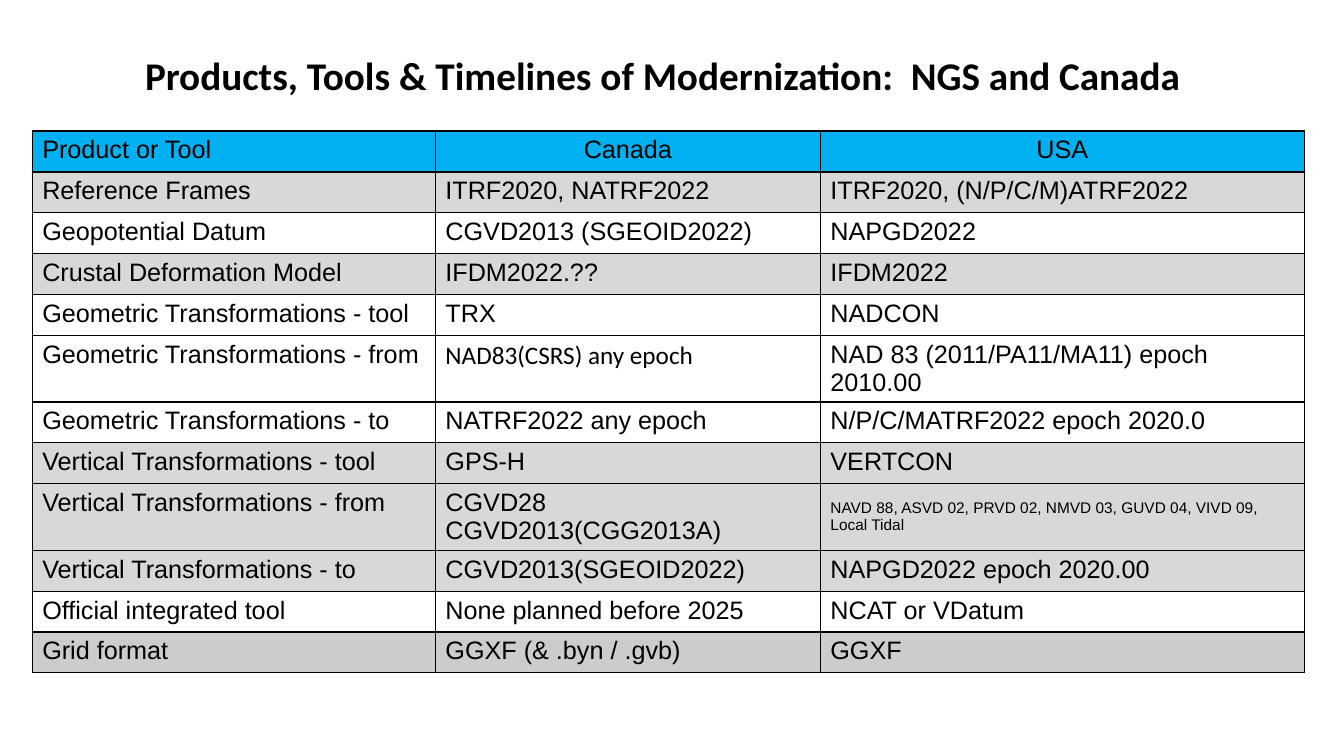
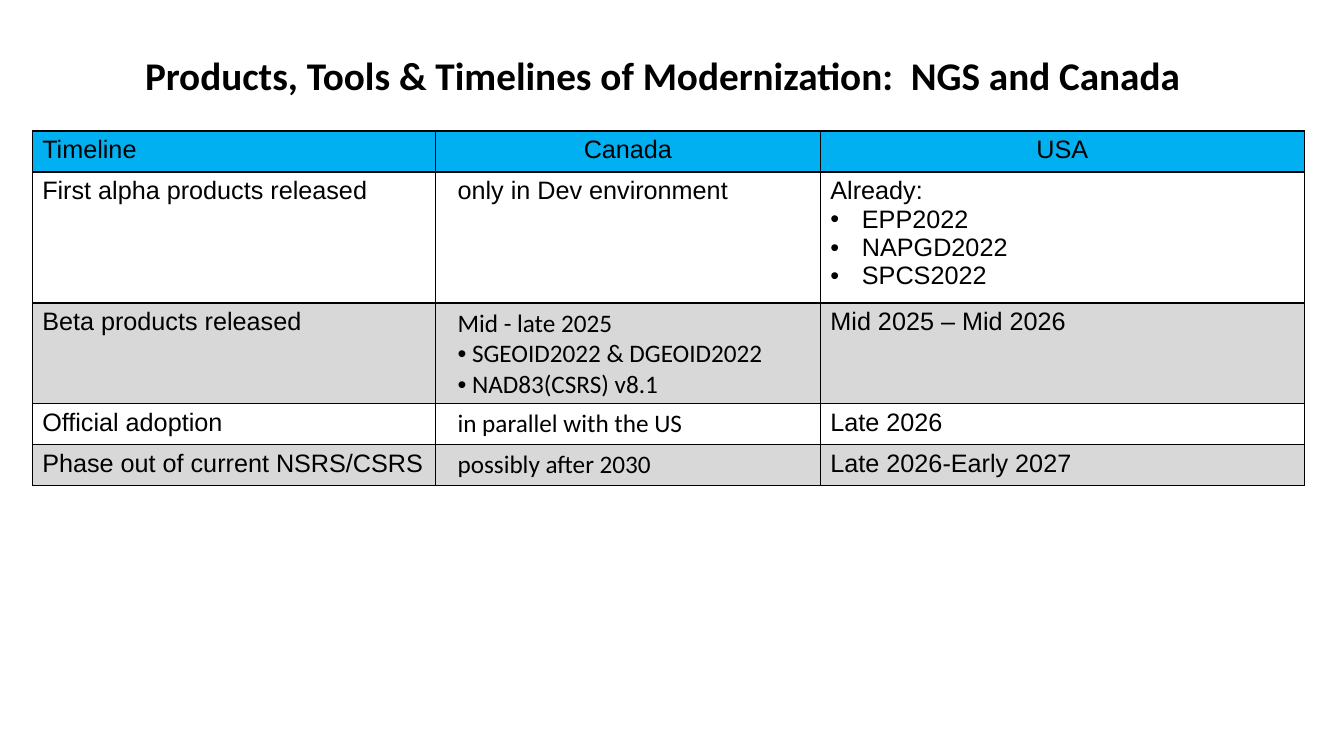
from dataclasses import dataclass, field
from typing import Any

from lxml.etree import SubElement
from pptx import Presentation
from pptx.dml.color import RGBColor
from pptx.enum.text import MSO_ANCHOR, MSO_AUTO_SIZE, PP_ALIGN
from pptx.oxml.ns import qn
from pptx.util import Pt


@dataclass(frozen=True)
class Theme:
    """Colours, fonts and type sizes shared by the slides."""
    ink: str = "000000"
    header: str = "00B0F0"
    white: str = "FFFFFF"
    grey: str = "D8D8D8"
    dark_grey: str = "CCCCCC"
    body_font: str = "Arial"
    alt_font: str = "Calibri"
    title_size: int = 28
    body_size: int = 18
    small_size: int = 11
    border: float = 1


THEME = Theme()
TITLE = "Products, Tools & Timelines of Modernization:  NGS and Canada"
COLUMN_WIDTHS = (288, 275, 345.6)
ROW_HEIGHT = 29.2


@dataclass(frozen=True)
class Line:
    """One paragraph of a cell with its format."""
    text: str
    style: dict[str, Any] = field(default_factory=dict)


@dataclass(frozen=True)
class Row:
    """One table row with its fill and cells."""
    fill: str
    cells: tuple


CENTERED = {"align": PP_ALIGN.CENTER}
ALTERNATE = {"font": THEME.alt_font}
SMALL = {"size": THEME.small_size}
INDENTED = {"left": 8.64}
INDENTED_ALTERNATE = ALTERNATE | INDENTED
BULLETED = {"left": 22.5, "hanging": 22.5, "bullet": "•"}
TIGHT_BULLETED = ALTERNATE | {"left": 19, "hanging": 10.36, "bullet": "•"}


def header_row(subject):
    """Return the header row for a comparison of the two countries."""
    return Row(THEME.header, (subject, Line("Canada", CENTERED), Line("USA", CENTERED)))


PRODUCT_ROWS = (
    header_row("Product or Tool"),
    Row(THEME.grey, ("Reference Frames", "ITRF2020, NATRF2022", "ITRF2020, (N/P/C/M)ATRF2022")),
    Row(THEME.white, ("Geopotential Datum", "CGVD2013 (SGEOID2022)", "NAPGD2022")),
    Row(THEME.grey, ("Crustal Deformation Model", "IFDM2022.??", "IFDM2022")),
    Row(THEME.white, ("Geometric Transformations - tool", "TRX", "NADCON")),
    Row(THEME.white, ("Geometric Transformations - from",
                      Line("NAD83(CSRS) any epoch", ALTERNATE),
                      "NAD 83 (2011/PA11/MA11) epoch 2010.00")),
    Row(THEME.white, ("Geometric Transformations - to", "NATRF2022 any epoch",
                      "N/P/C/MATRF2022 epoch 2020.0")),
    Row(THEME.grey, ("Vertical Transformations - tool", "GPS-H", "VERTCON")),
    Row(THEME.grey, ("Vertical Transformations - from",
                     ("CGVD28", "CGVD2013(CGG2013A)"),
                     Line("NAVD 88, ASVD 02, PRVD 02, NMVD 03, GUVD 04, VIVD 09, Local Tidal",
                          SMALL))),
    Row(THEME.grey, ("Vertical Transformations - to", "CGVD2013(SGEOID2022)",
                     "NAPGD2022 epoch 2020.00")),
    Row(THEME.white, ("Official integrated tool", "None planned before 2025", "NCAT or VDatum")),
    Row(THEME.dark_grey, ("Grid format", "GGXF (& .byn / .gvb)", "GGXF")),
)

TIMELINE_ROWS = (
    header_row("Timeline"),
    Row(THEME.white, ("First alpha products released",
                      Line("only in Dev environment", INDENTED),
                      ("Already:", Line("EPP2022", BULLETED), Line("NAPGD2022", BULLETED),
                       Line("SPCS2022", BULLETED)))),
    Row(THEME.grey, ("Beta products released",
                     (Line("Mid - late 2025", INDENTED_ALTERNATE),
                      Line("SGEOID2022 & DGEOID2022", TIGHT_BULLETED),
                      Line("NAD83(CSRS) v8.1", TIGHT_BULLETED)),
                     "Mid 2025 – Mid 2026")),
    Row(THEME.white, ("Official adoption",
                      Line("in parallel with the US", INDENTED_ALTERNATE), "Late 2026")),
    Row(THEME.grey, ("Phase out of current NSRS/CSRS",
                     Line("possibly after 2030", INDENTED_ALTERNATE), "Late 2026-Early 2027")),
)


def write_text(paragraph, text, *, font=THEME.body_font, size=THEME.body_size, bold=False,
               align=PP_ALIGN.LEFT, left=0, hanging=0, bullet=None):
    """Write formatted text into a paragraph."""
    paragraph.alignment = align
    properties = paragraph._p.get_or_add_pPr()
    properties.set("marL", str(Pt(left)))
    properties.set("indent", str(-Pt(hanging)))
    if bullet:
        bullet_color = SubElement(properties, qn("a:buClr"))
        SubElement(bullet_color, qn("a:srgbClr"), val=THEME.ink)
        SubElement(properties, qn("a:buFont"), typeface=THEME.body_font)
        SubElement(properties, qn("a:buChar"), char=bullet)
    run = paragraph.add_run()
    run.text = text
    run.font.name = font
    run.font.size = Pt(size)
    run.font.bold = bold
    run.font.color.rgb = RGBColor.from_string(THEME.ink)


def add_title(slide, text):
    """Add the slide title."""
    title = slide.shapes.add_textbox(Pt(96.5), Pt(33.1), Pt(762.5), Pt(41))
    title.text_frame.word_wrap = True
    title.text_frame.auto_size = MSO_AUTO_SIZE.SHAPE_TO_FIT_TEXT
    write_text(title.text_frame.paragraphs[0], text, font=THEME.alt_font,
               size=THEME.title_size, bold=True)


def draw_borders(cell):
    """Draw a thin line on every side of a cell."""
    properties = cell._tc.get_or_add_tcPr()
    for side in ("lnL", "lnR", "lnT", "lnB"):
        edge = SubElement(properties, qn(f"a:{side}"), w=str(Pt(THEME.border)))
        SubElement(SubElement(edge, qn("a:solidFill")), qn("a:srgbClr"), val=THEME.ink)


def fill_cell(cell, content, fill):
    """Give a cell its borders, fill and paragraphs."""
    draw_borders(cell)
    cell.fill.solid()
    cell.fill.fore_color.rgb = RGBColor.from_string(fill)
    entries = content if isinstance(content, tuple) else (content,)
    lines = [Line(entry) if isinstance(entry, str) else entry for entry in entries]
    small = lines[0].style.get("size") == THEME.small_size
    cell.vertical_anchor = MSO_ANCHOR.MIDDLE if small else MSO_ANCHOR.TOP
    for index, line in enumerate(lines):
        paragraph = cell.text_frame.add_paragraph() if index else cell.text_frame.paragraphs[0]
        write_text(paragraph, line.text, **line.style)


def add_comparison(slide, rows):
    """Add the table that compares the two countries."""
    table = slide.shapes.add_table(len(rows), len(COLUMN_WIDTHS), Pt(23), Pt(93.6),
                                   Pt(sum(COLUMN_WIDTHS)), Pt(ROW_HEIGHT * len(rows))).table
    table.first_row = False
    table.horz_banding = False
    for column, width in zip(table.columns, COLUMN_WIDTHS):
        column.width = Pt(width)
    for table_row, row in zip(table.rows, rows):
        for cell, content in zip(table_row.cells, row.cells):
            fill_cell(cell, content, row.fill)


def main():
    """Build and save the presentation."""
    deck = Presentation()
    deck.slide_width, deck.slide_height = Pt(960), Pt(540)
    for rows in (PRODUCT_ROWS, TIMELINE_ROWS):
        slide = deck.slides.add_slide(deck.slide_layouts[6])
        add_comparison(slide, rows)
        add_title(slide, TITLE)
    deck.save("out.pptx")


if __name__ == "__main__":
    main()
